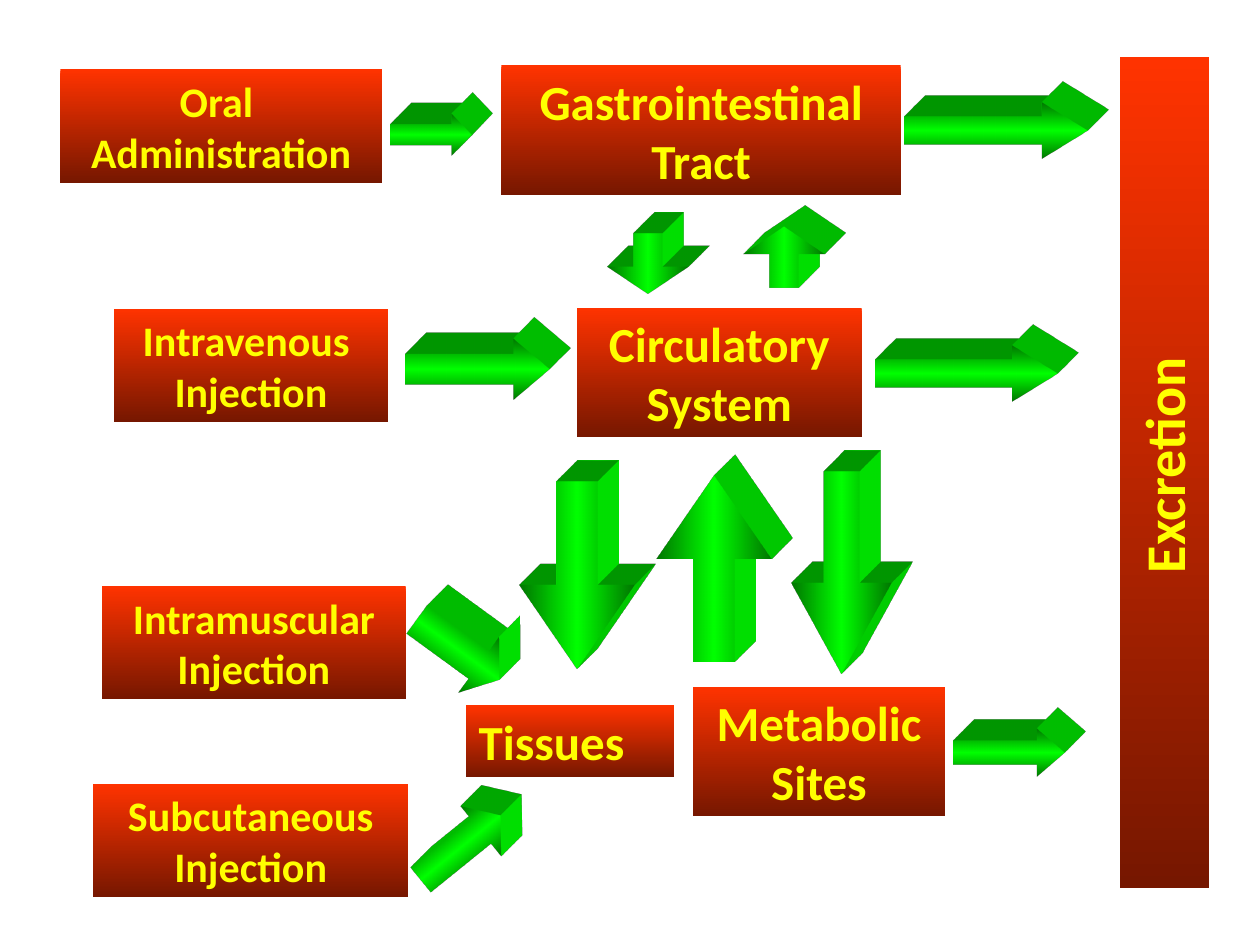
from lxml import etree
from pptx import Presentation, util as u
from pptx.dml.color import RGBColor
from pptx.enum import shapes, text
from pptx.oxml.ns import nsdecls

RED = RGBColor(0xFF, 0x33, 0x00)
GREEN = RGBColor(0x00, 0xFF, 0x00)
YELLOW = RGBColor(0xFF, 0xFF, 0x00)
DARK = '<a:gamma/><a:shade val="46275"/><a:invGamma/>'

# Lines of text, size, left, top, width, height (cm)
ROUTES = [
    (["Oral ", "Administration"], 24, 1.22, 1.4, 6.48, 2.29),
    (["Intravenous ", "Injection"], 24, 2.29, 6.22, 5.54, 2.29),
    (["Intramuscular", "Injection"], 24, 2.06, 11.81, 6.12, 2.29),
    (["Subcutaneous", "Injection"], 24, 1.88, 15.8, 6.35, 2.29),
]
SITES = [
    (["Gastrointestinal", "Tract"], 28, 10.11, 1.32, 8.05, 2.62),
    (["Circulatory", "System"], 28, 11.63, 6.2, 5.74, 2.62),
    (["Tissues"], 28, 9.4, 14.22, 4.19, 1.45),
    (["Metabolic", "Sites"], 28, 13.97, 13.84, 5.08, 2.62),
]
EXCRETION_BAR = (22.58, 1.14, 1.8, 16.76)
EXCRETION_LABEL = (20.62, 8.18, 5.64, 1.6)

# Left, top, length, breadth (cm), rotation, flipped, shaft and head ratios
ARROWS = [
    (7.87, 2.29, 1.63, 0.84, 0, False, 0.5, 0.48),
    (8.18, 6.83, 2.9, 1.22, 0, False, 0.5, 0.6),
    (8.2, 12.4, 2.06, 1.4, 36.1, False, 0.5, 0.37),
    (8.26, 16.43, 2.06, 1.3, 321, False, 0.5, 0.39),
    (12.45, 4.5, 1.22, 1.63, 90, False, 0.36, 0.45),
    (15.19, 4.37, 1.22, 1.63, 90, True, 0.36, 0.45),
    (9.75, 10.44, 3.76, 2.31, 90, False, 0.36, 0.73),
    (12.52, 10.31, 3.76, 2.31, 90, True, 0.36, 0.73),
    (14.94, 10.54, 4.06, 2.01, 90, False, 0.36, 0.91),
    (18.24, 2.06, 3.68, 1.14, 0, False, 0.5, 0.81),
    (17.65, 6.96, 3.68, 1.14, 0, False, 0.5, 0.81),
    (19.23, 14.68, 2.24, 0.97, 0, False, 0.5, 0.58),
]


def shade(shape, color, dark_stops, all_stops):
    """Vertical gradient that stays upright when the shape turns."""
    stops = "".join(
        f'<a:gs pos="{stop * 1000}"><a:srgbClr val="{color}">'
        f'{DARK if stop in dark_stops else ""}</a:srgbClr></a:gs>'
        for stop in all_stops)
    gradient = etree.fromstring(
        f'<a:gradFill {nsdecls("a")} rotWithShape="0"><a:gsLst>{stops}</a:gsLst>'
        '<a:lin ang="5400000" scaled="1"/></a:gradFill>')
    shape._element.spPr.find("{*}prstGeom").addnext(gradient)
    shape.line.fill.background()
    shape.shadow.inherit = False


def extrude(shape, color):
    """Oblique depth towards the top right."""
    for part in (
        '<a:scene3d {0}><a:camera prst="legacyObliqueTopRight"/>'
        '<a:lightRig rig="legacyFlat3" dir="b"/></a:scene3d>',
        '<a:sp3d {0} extrusionH="430200" prstMaterial="legacyMatte">'
        '<a:bevelT w="13500" h="13500" prst="angle"/>'
        '<a:bevelB w="13500" h="13500" prst="angle"/>'
        '<a:extrusionClr><a:srgbClr val="{1}"/></a:extrusionClr></a:sp3d>',
    ):
        shape._element.spPr.append(etree.fromstring(part.format(nsdecls("a"), color)))


def write(shape, lines, size, align, wrap=False):
    frame = shape.text_frame
    frame.word_wrap = wrap
    frame.auto_size = text.MSO_AUTO_SIZE.SHAPE_TO_FIT_TEXT
    frame.vertical_anchor = text.MSO_ANCHOR.TOP
    for index, line in enumerate(lines):
        para = frame.add_paragraph() if index else frame.paragraphs[0]
        para.text = line
        para.alignment = align
        font = para.font
        font.name, font.size, font.bold = "Calibri", u.Pt(size), True
        font.color.rgb = YELLOW


def add_box(page, place):
    box = page.shapes.add_shape(shapes.MSO_SHAPE.RECTANGLE, *map(u.Cm, place))
    shade(box, RED, [100], [0, 100])
    return box


def main():
    deck = Presentation()
    deck.slide_width, deck.slide_height = u.Cm(25.4), u.Cm(19.05)
    page = deck.slides.add_slide(deck.slide_layouts[6])

    # Routes of entry and sites in the body
    for lines, size, *place in ROUTES + SITES:
        single = len(lines) == 1
        align = text.PP_ALIGN.LEFT if single else text.PP_ALIGN.CENTER
        write(add_box(page, place), lines, size, align, wrap=single)

    # Excretion bar with upright label
    add_box(page, EXCRETION_BAR)
    label = page.shapes.add_textbox(*map(u.Cm, EXCRETION_LABEL))
    label.rotation = 270
    write(label, ["Excretion"], 32, text.PP_ALIGN.LEFT)

    # Arrows between the boxes
    for *place, turn, flipped, shaft, head in ARROWS:
        arrow = page.shapes.add_shape(shapes.MSO_SHAPE.RIGHT_ARROW, *map(u.Cm, place))
        arrow.rotation = turn
        arrow.adjustments[0], arrow.adjustments[1] = shaft, head
        if flipped:
            frame = arrow._element.spPr.find("{*}xfrm")
            frame.set("flipH", "1")
            frame.set("flipV", "1")
        shade(arrow, GREEN, [0, 100], [0, 50, 100])
        extrude(arrow, GREEN)

    deck.save("out.pptx")


if __name__ == "__main__":
    main()
